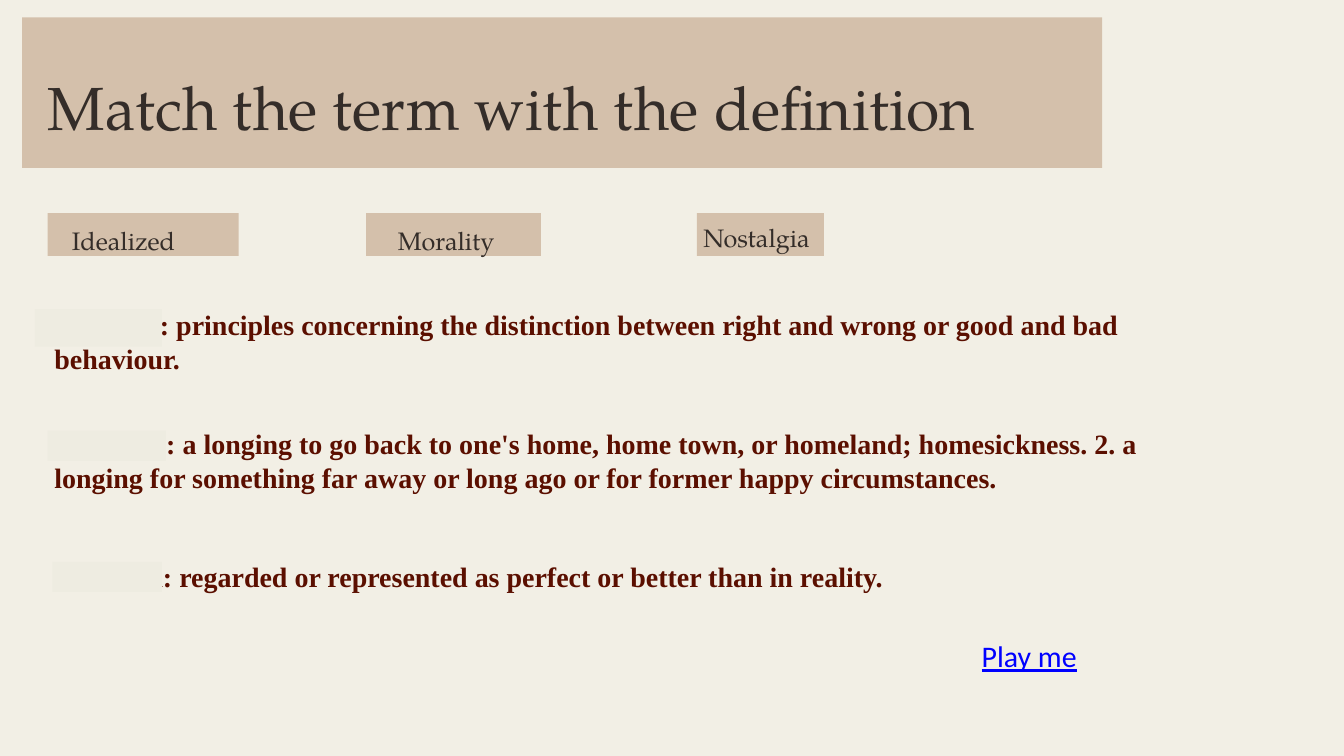
from pptx import Presentation
from pptx.dml.color import RGBColor
from pptx.enum.shapes import MSO_SHAPE as Preset
from pptx.enum.text import MSO_ANCHOR as Anchor, MSO_AUTO_SIZE as AutoSize, PP_ALIGN as Align
from pptx.util import Inches, Pt

COLUMNS, ROWS = 20, 11.25
TITLE_ONLY = 5


def color(hex_string):
    return RGBColor.from_string(hex_string)


class Worksheet:
    """Style and current slide; boxes are (column, row, columns, rows)."""
    BACKGROUND, SAND, COVER = "F2EFE5", "D4C0AB", "EEECE1"
    INK, MAROON, LINK = "342D29", "5B0F00", "0000FF"
    HEADING, BODY, LABEL = "TeX Gyre Pagella", "Times New Roman", "Calibri"

    def __init__(self, presentation):
        self.width, self.height = presentation.slide_width, presentation.slide_height
        self.slide = presentation.slides.add_slide(presentation.slide_layouts[TITLE_ONLY])
        fill = self.slide.background.fill
        fill.solid()
        fill.fore_color.rgb = color(self.BACKGROUND)

    def place(self, box):
        column, row, columns, rows = box
        return (int(self.width * column / COLUMNS), int(self.height * row / ROWS),
                int(self.width * columns / COLUMNS), int(self.height * rows / ROWS))

    def set_text(self, shape, text, size, font, ink, inset=0.1, spacing=1.0,
                 anchor=Anchor.TOP, bold=False, underline=False):
        frame = shape.text_frame
        frame.word_wrap, frame.auto_size = True, AutoSize.NONE
        frame.vertical_anchor = anchor
        frame.margin_left = frame.margin_right = Inches(inset)
        frame.margin_top = frame.margin_bottom = Inches(inset)
        frame.text = text
        paragraph = frame.paragraphs[0]
        paragraph.alignment, paragraph.line_spacing = Align.LEFT, spacing
        paragraph.font.name, paragraph.font.size = font, Pt(size)
        paragraph.font.bold, paragraph.font.underline = bold, underline
        paragraph.font.color.rgb = color(ink)

    def panel(self, box, fill):
        shape = self.slide.shapes.add_shape(Preset.RECTANGLE, *self.place(box))
        shape.shadow.inherit = False
        shape.fill.solid()
        shape.fill.fore_color.rgb = color(fill)
        shape.line.fill.background()
        return shape

    def text(self, box, text, *style, **options):
        shape = self.slide.shapes.add_textbox(*self.place(box))
        self.set_text(shape, text, *style, **options)

    def title(self, box, text):
        title = self.slide.shapes.title
        title.left, title.top, title.width, title.height = self.place(box)
        self.set_text(title, text, 65, self.HEADING, self.INK, inset=0, spacing=1.22)
        # Bring the title in front of its band
        self.slide.shapes._spTree.append(title._element)

    def term(self, column, columns, text, indent=None):
        chip = self.panel((column, 3.17, columns, 0.64), self.SAND)
        style = (text, 27, self.HEADING, self.INK)
        if indent is None:
            self.set_text(chip, *style, spacing=1.22, anchor=Anchor.MIDDLE)
        else:
            self.text((column + indent, 3.26, 1.89, 0.45), *style, inset=0, spacing=1.22)

    def definition(self, box, text, cover):
        self.text(box, text, 30, self.BODY, self.MAROON, bold=True)
        self.panel(cover, self.COVER)


def main():
    presentation = Presentation()
    presentation.slide_width, presentation.slide_height = Inches(COLUMNS), Inches(ROWS)
    sheet = Worksheet(presentation)

    # Title on its band
    sheet.panel((0.33, 0.26, 16.07, 2.24), sheet.SAND)
    sheet.title((0.71, 0.8, 15.55, 1.09), "Match the term with the definition")

    # Terms to match
    sheet.term(0.71, 2.84, "Idealized", indent=0.36)
    sheet.term(5.45, 2.6, "Morality", indent=0.47)
    sheet.term(10.37, 1.89, "Nostalgia")

    # Definitions, each with its term covered
    definitions = [
        ((0.71, 4.48, 17.52, 1.77),
         "Morality: principles concerning the distinction between right and wrong "
         "or good and bad behaviour.",
         (0.52, 4.6, 1.89, 0.56)),
        ((0.71, 6.25, 16.43, 1.77),
         "Nostalgia: a longing to go back to one's home, home town, or homeland; "
         "homesickness. 2. a longing for something far away or long ago or for "
         "former happy circumstances.",
         (0.71, 6.41, 1.76, 0.45)),
        ((0.71, 8.23, 15.74, 1.09),
         "Idealized: regarded or represented as perfect or better than in reality.",
         (0.78, 8.36, 1.63, 0.45)),
    ]
    for box, text, cover in definitions:
        sheet.definition(box, text, cover)

    # Play label
    sheet.text((14.51, 9.39, 3.12, 1.09), "Play me", 32, sheet.LABEL, sheet.LINK,
               underline=True)

    presentation.save("out.pptx")


if __name__ == "__main__":
    main()
